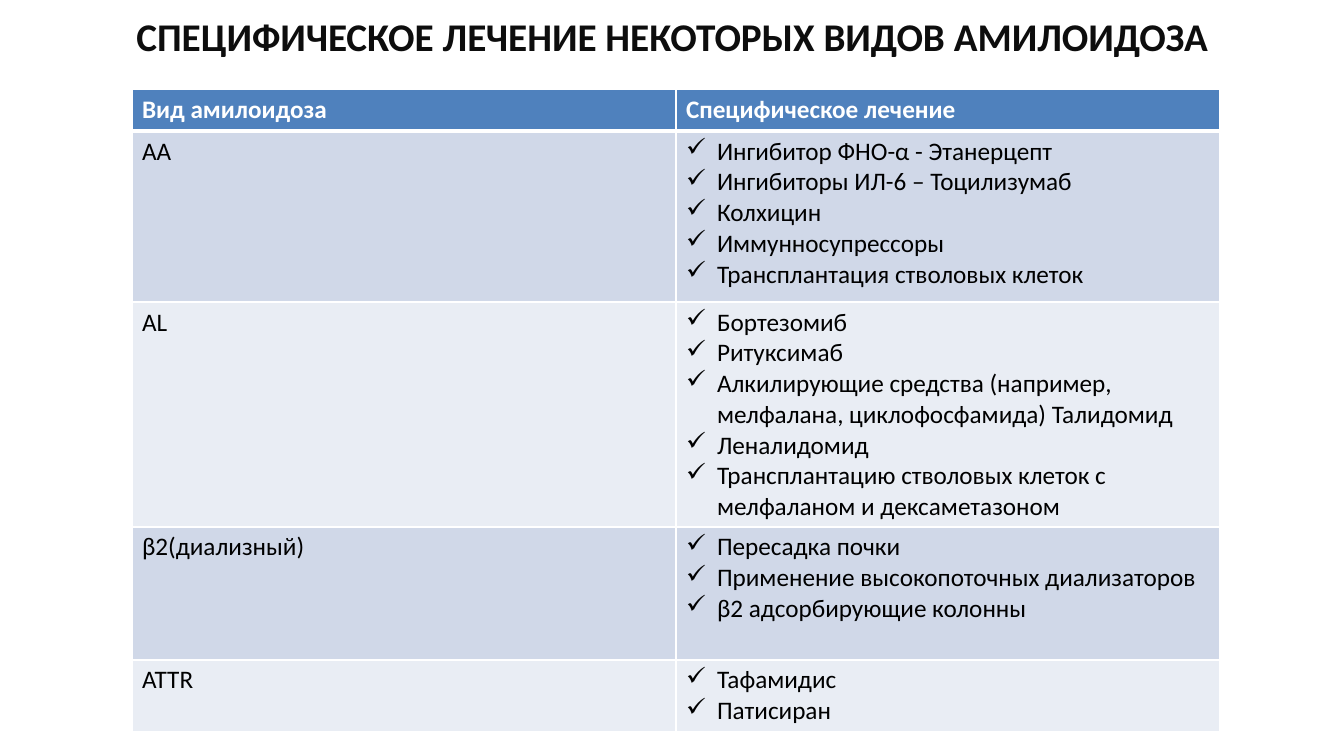
from lxml import etree
from pptx import Presentation
from pptx import util as u
from pptx.dml.color import RGBColor
from pptx.enum import text
from pptx.oxml import ns

PX = 914400 / 100.8
FONT = "Calibri"
WHITE, BLACK, TITLE = "FFFFFF", "000000", "0D0D0D"
HEADER_FILL = "4F81BD"
BAND_FILLS = ("D0D8E8", "E9EDF4")
BULLET_INDENT = 31

HEADINGS = ("Вид амилоидоза", "Специфическое лечение")
TREATMENTS = (
    ("АА", 171, (
        "Ингибитор ФНО-α - Этанерцепт",
        "Ингибиторы ИЛ-6 – Тоцилизумаб",
        "Колхицин",
        "Иммунносупрессоры",
        "Трансплантация стволовых клеток",
    )),
    ("AL", 225, (
        "Бортезомиб",
        "Ритуксимаб",
        "Алкилирующие средства (например, мелфалана, циклофосфамида) Талидомид",
        "Леналидомид",
        "Трансплантацию стволовых клеток с мелфаланом и дексаметазоном",
    )),
    ("β2(диализный)", 133, (
        "Пересадка почки",
        "Применение высокопоточных диализаторов",
        "β2 адсорбирующие колонны",
    )),
    ("ATTR", 72, ("Тафамидис", "Патисиран")),
)


def px(length):
    return u.Emu(round(length * PX))


def color(value):
    return RGBColor.from_string(value)


def add_bullet(para):
    """Give the paragraph a check mark with a hanging indent."""
    properties = para._p.get_or_add_pPr()
    properties.set("marL", str(px(BULLET_INDENT)))
    properties.set("indent", str(-px(BULLET_INDENT)))
    etree.SubElement(properties, ns.qn("a:buChar"), char="✓")


def write(frame, lines, size=18, ink=BLACK, bold=False, align=None, bullets=False):
    """Fill a text frame with one paragraph for each line."""
    for index, line in enumerate(lines):
        para = frame.add_paragraph() if index else frame.paragraphs[0]
        para.alignment = align
        if bullets:
            add_bullet(para)
        span = para.add_run()
        span.text = line
        span.font.name = FONT
        span.font.size = u.Pt(size)
        span.font.bold = bold
        span.font.color.rgb = color(ink)


def set_borders(cell, bottom):
    """Draw white borders, 1 pt except at the bottom."""
    properties = cell._tc.get_or_add_tcPr()
    for side, width in (("L", 1), ("R", 1), ("T", 1), ("B", bottom)):
        line = etree.SubElement(properties, ns.qn(f"a:ln{side}"), w=str(u.Pt(width)))
        fill = etree.SubElement(line, ns.qn("a:solidFill"))
        etree.SubElement(fill, ns.qn("a:srgbClr"), val=WHITE)


def fill_cell(cell, lines, fill, bottom=1, **style):
    set_borders(cell, bottom)
    cell.fill.solid()
    cell.fill.fore_color.rgb = color(fill)
    write(cell.text_frame, lines, **style)


def add_title(page, title):
    box = page.shapes.add_textbox(px(67), px(-27), px(1210), px(126))
    frame = box.text_frame
    frame.word_wrap = True
    frame.vertical_anchor = text.MSO_ANCHOR.MIDDLE
    write(frame, [title], size=28, ink=TITLE, bold=True, align=text.PP_ALIGN.CENTER)


def add_treatment_table(page):
    heights = [42] + [height for _, height, _ in TREATMENTS]
    table = page.shapes.add_table(
        len(heights), 2, px(132), px(89), px(1088), px(sum(heights))).table
    for row, height in zip(table.rows, heights):
        row.height = px(height)

    for column, heading in enumerate(HEADINGS):
        fill_cell(table.cell(0, column), [heading], HEADER_FILL,
                  bottom=3, ink=WHITE, bold=True)
    for index, (kind, _, remedies) in enumerate(TREATMENTS):
        fill = BAND_FILLS[index % 2]
        fill_cell(table.cell(index + 1, 0), [kind], fill)
        fill_cell(table.cell(index + 1, 1), remedies, fill, bullets=True)


def main():
    deck = Presentation()
    deck.slide_width, deck.slide_height = px(1344), px(756)
    page = deck.slides.add_slide(deck.slide_layouts[6])
    page.background.fill.solid()
    page.background.fill.fore_color.rgb = color(WHITE)
    add_title(page, "СПЕЦИФИЧЕСКОЕ ЛЕЧЕНИЕ НЕКОТОРЫХ ВИДОВ АМИЛОИДОЗА")
    add_treatment_table(page)
    deck.save("out.pptx")


if __name__ == "__main__":
    main()
